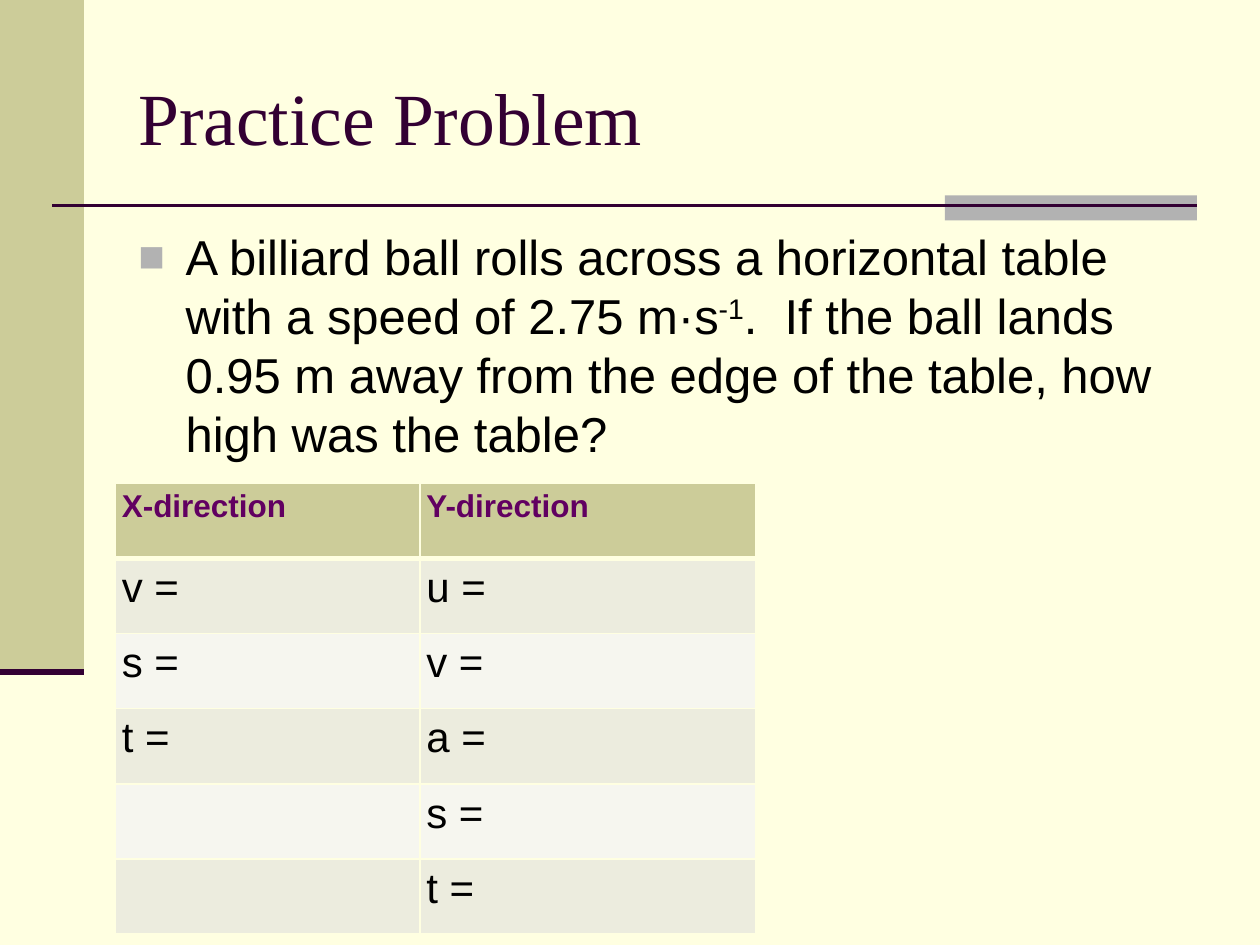
import pptx
import pptx.dml.color
import pptx.enum.shapes
import pptx.enum.text
import pptx.oxml
import pptx.oxml.ns
import pptx.util
from lxml import etree

Pt = pptx.util.Pt
qn = pptx.oxml.ns.qn

COLORS = {
    "cream": "FFFFE1", "khaki": "CCCC99", "gray": "B2B2B2", "plum": "330033",
    "header": "610061", "black": "000000", "band_dark": "ECECDE", "band_light": "F6F6EF",
}
HEADINGS = ("X-direction", "Y-direction")
QUANTITIES = [("v =", "u ="), ("s =", "v ="), ("t =", "a ="), ("", "s ="), ("", "t =")]
PROBLEM = [
    ("A billiard ball rolls across a horizontal table with a speed of 2.75 m·s", 0),
    ("-1", 30000),
    (".  If the ball lands 0.95 m away from the edge of the table, how high was the table?", 0),
]


def rgb(name):
    return pptx.dml.color.RGBColor.from_string(COLORS[name])


def add_run(paragraph, text, color, **font_values):
    run = paragraph.add_run()
    run.text = text
    for attribute, value in font_values.items():
        setattr(run.font, attribute, value)
    run.font.color.rgb = rgb(color)
    return run


def add_block(slide, left, top, width, height, color):
    block = slide.shapes.add_shape(
        pptx.enum.shapes.MSO_SHAPE.RECTANGLE, Pt(left), Pt(top), Pt(width), Pt(height))
    block.shadow.inherit = False
    block.fill.solid()
    block.fill.fore_color.rgb = rgb(color)
    block.line.fill.background()


def add_rule(slide, left, top, width, weight):
    rule = slide.shapes.add_connector(
        pptx.enum.shapes.MSO_CONNECTOR.STRAIGHT, Pt(left), Pt(top), Pt(left + width), Pt(top))
    rule.line.color.rgb = rgb("plum")
    rule.line.width = Pt(weight)
    etree.SubElement(rule.element.spPr, qn("a:effectLst"))


def add_side_band(slide, left, top, width, height):
    add_block(slide, left, top, width, height, "khaki")
    add_rule(slide, left, top + height, width, 3.5)


def add_divider(slide, left, top, width, height):
    """Rule across the box, with a gray bar at its right end."""
    bar = 144
    add_block(slide, left + width - bar, top, bar, height, "gray")
    add_rule(slide, left, top + 6, width, 1.5)


def add_text_frame(slide, left, top, width, height):
    frame = slide.shapes.add_textbox(Pt(left), Pt(top), Pt(width), Pt(height)).text_frame
    frame.word_wrap = True
    return frame


def add_title(slide, left, top, width, height):
    frame = add_text_frame(slide, left, top, width, height)
    frame.vertical_anchor = pptx.enum.text.MSO_ANCHOR.MIDDLE
    add_run(frame.paragraphs[0], "Practice Problem", "plum", name="Times New Roman", size=Pt(42))


def add_bullet(paragraph, indent):
    properties = paragraph._p.get_or_add_pPr()
    properties.set("marL", str(Pt(indent)))
    properties.set("indent", str(Pt(-indent)))
    color = etree.SubElement(properties, qn("a:buClr"))
    etree.SubElement(color, qn("a:srgbClr"), val=COLORS["gray"])
    etree.SubElement(properties, qn("a:buSzPct"), val="90000")
    etree.SubElement(properties, qn("a:buFont"), typeface="Arial")
    etree.SubElement(properties, qn("a:buChar"), char="■")


def add_problem(slide, left, top, width, height):
    paragraph = add_text_frame(slide, left, top, width, height).paragraphs[0]
    paragraph.space_before = Pt(5.6)
    add_bullet(paragraph, 27)
    for text, baseline in PROBLEM:
        run = add_run(paragraph, text, "black", name="Arial", size=Pt(28))
        if baseline:
            run.font._element.set("baseline", str(baseline))


def set_borders(cell, weights):
    properties = cell._tc.get_or_add_tcPr()
    for side, weight in weights.items():
        border = etree.SubElement(properties, qn(f"a:ln{side}"), w=str(Pt(weight)))
        fill = etree.SubElement(border, qn("a:solidFill"))
        etree.SubElement(fill, qn("a:srgbClr"), val=COLORS["cream"])


def add_quantities(slide, left, top, width, height):
    rows = [HEADINGS, *QUANTITIES]
    table = slide.shapes.add_table(
        len(rows), len(HEADINGS), Pt(left), Pt(top), Pt(width), Pt(height)).table
    table.first_row = table.horz_banding = False
    first_width = 174
    for column, column_width in zip(table.columns, (first_width, width - first_width)):
        column.width = Pt(column_width)
    margins = dict.fromkeys(("margin_left", "margin_right", "margin_top", "margin_bottom"), Pt(3.6))
    for r, texts in enumerate(rows):
        table.rows[r].height = Pt(height / len(rows))
        if r == 0:
            fill, color, font = "khaki", "header", {"size": Pt(18), "bold": True}
        else:
            fill = "band_dark" if r % 2 else "band_light"
            color, font = "black", {"size": Pt(24), "bold": False}
        for c, text in enumerate(texts):
            cell = table.cell(r, c)
            for attribute, value in margins.items():
                setattr(cell, attribute, value)
            set_borders(cell, {"L": 1, "R": 1, "T": 3 if r == 1 else 1, "B": 3 if r == 0 else 1})
            cell.fill.solid()
            cell.fill.fore_color.rgb = rgb(fill)
            if text:
                add_run(cell.text_frame.paragraphs[0], text, color, name="Arial", **font)


def main():
    deck = pptx.Presentation()
    deck.slide_width, deck.slide_height = Pt(720), Pt(540)
    slide = deck.slides.add_slide(deck.slide_layouts[6])
    slide.background.fill.solid()
    slide.background.fill.fore_color.rgb = rgb("cream")
    add_side_band(slide, 0, 0, 48, 384)
    add_divider(slide, 30, 111.6, 654, 14.4)
    add_title(slide, 72, 21.6, 612, 90)
    add_problem(slide, 72, 126, 612, 356.4)
    add_quantities(slide, 66, 276, 366, 258)
    deck.save("out.pptx")


if __name__ == "__main__":
    main()
